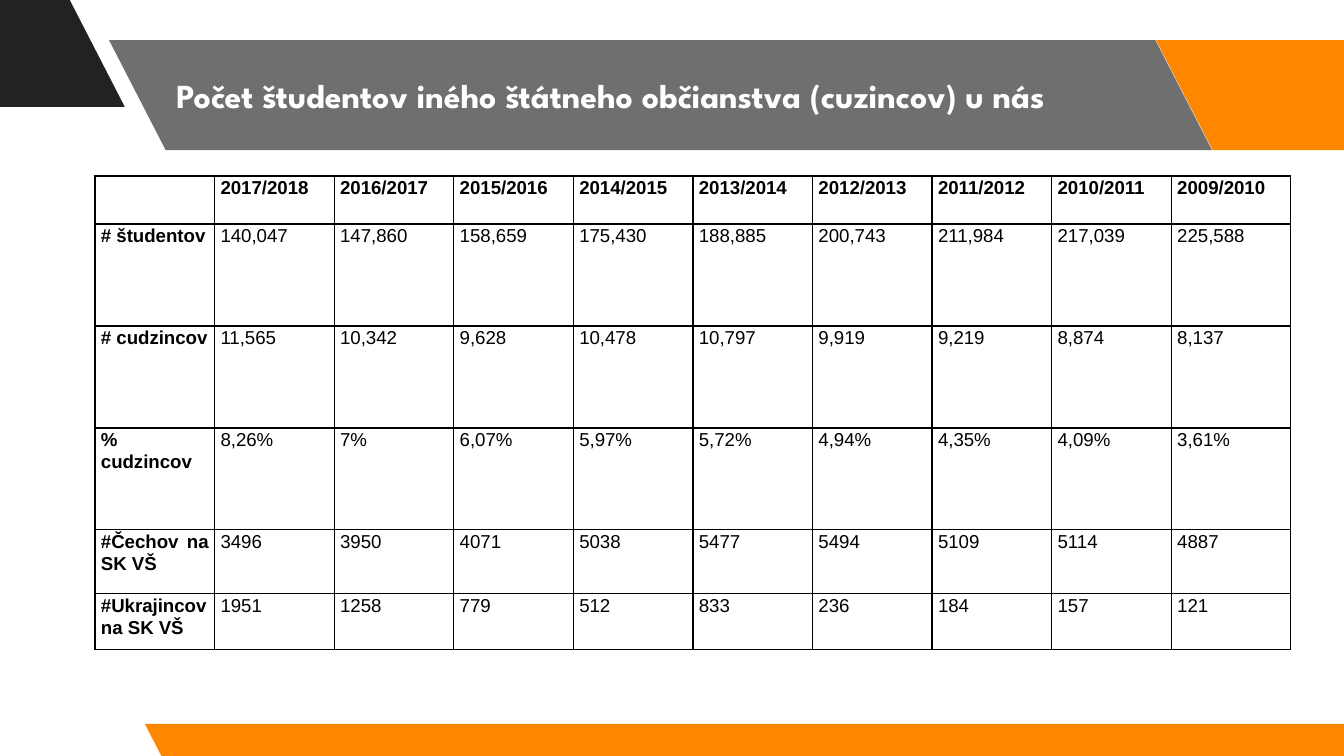
from dataclasses import dataclass

from lxml.etree import SubElement
from pptx import Presentation
from pptx.dml.color import RGBColor
from pptx.enum.shapes import MSO_SHAPE as Shape
from pptx.enum.text import MSO_ANCHOR as Anchor, PP_ALIGN as Align
from pptx.oxml import parse_xml
from pptx.oxml.ns import nsdecls, qn
from pptx.util import Pt

EMU_PER_PX = 914400 / 134.4


def px(n):
    return round(n * EMU_PER_PX)


@dataclass(frozen=True)
class Theme:
    dark: str = "222222"
    accent: str = "FF8700"
    light: str = "FFFFFF"
    ink: str = "000000"
    title_font: str = "League Spartan"
    body_font: str = "Arial"
    title_size: int = 18
    table_size: int = 10
    border: float = 0.75
    slant: float = 0.515


class SlideBuilder:
    """Draws styled elements on the current slide."""

    def __init__(self, prs, theme):
        self.theme = theme
        self.s = prs.slides.add_slide(prs.slide_layouts[5])

    def style(self, p, name, size, color, bold):
        p.font.name = name
        p.font.size = Pt(size)
        p.font.bold = bold
        p.font.color.rgb = RGBColor.from_string(color)

    def band(self, x, y, w, h, color, opacity=100):
        sp = self.s.shapes.add_shape(Shape.PARALLELOGRAM, px(x), px(y), px(w), px(h))
        sp.adjustments[0] = self.theme.slant
        sp.shadow.inherit = False
        sp.fill.solid()
        sp.fill.fore_color.rgb = RGBColor.from_string(color)
        sp.line.fill.background()
        sp._element.spPr.find(qn("a:xfrm")).set("flipH", "1")
        if opacity < 100:
            clr = sp._element.spPr.find(qn("a:solidFill"))[0]
            SubElement(clr, qn("a:alpha")).set("val", str(opacity * 1000))

    def title(self, text, x, y, w, h):
        t = self.theme
        sp = self.s.shapes.title
        sp.left, sp.top, sp.width, sp.height = px(x), px(y), px(w), px(h)
        self.s.shapes._spTree.append(sp._element)
        tf = sp.text_frame
        tf.text = text
        tf.word_wrap = True
        tf.vertical_anchor = Anchor.MIDDLE
        tf.margin_left = tf.margin_right = tf.margin_top = tf.margin_bottom = Pt(7.2)
        p = tf.paragraphs[0]
        p.alignment = Align.LEFT
        self.style(p, t.title_font, t.title_size, t.light, True)

    def borders(self, cell):
        tc_pr = cell._tc.get_or_add_tcPr()
        for side in ("lnL", "lnR", "lnT", "lnB"):
            tc_pr.append(parse_xml(
                f'<a:{side} {nsdecls("a")} w="{Pt(self.theme.border)}"><a:solidFill>'
                f'<a:srgbClr val="{self.theme.ink}"/></a:solidFill></a:{side}>'))

    def cell(self, cell, text, bold):
        t = self.theme
        cell.margin_left = cell.margin_right = px(6)
        cell.margin_top = cell.margin_bottom = 0
        self.borders(cell)
        cell.fill.background()
        cell.text = text
        p = cell.text_frame.paragraphs[0]
        p.alignment = Align.JUSTIFY
        p.line_spacing = 1.07
        p.space_after = Pt(8)
        self.style(p, t.body_font, t.table_size, t.ink, bold)

    def table(self, rows, heights, x, y, w):
        n = len(rows[0])
        tbl = self.s.shapes.add_table(
            len(rows), n, px(x), px(y), px(w), px(sum(heights))).table
        tbl.first_row = tbl.horz_banding = False
        for col in tbl.columns:
            col.width = px(w / n)
        for i, (row, height) in enumerate(zip(rows, heights)):
            tbl.rows[i].height = px(height)
            for j, text in enumerate(row):
                self.cell(tbl.cell(i, j), text, i == 0 or j == 0)


YEARS = [f"{y}/{y + 1}" for y in range(2017, 2008, -1)]
FIGURES = {
    "# študentov": "140,047 147,860 158,659 175,430 188,885 200,743 211,984 217,039 225,588",
    "# cudzincov": "11,565 10,342 9,628 10,478 10,797 9,919 9,219 8,874 8,137",
    "% cudzincov": "8,26% 7% 6,07% 5,97% 5,72% 4,94% 4,35% 4,09% 3,61%",
    "#Čechov na SK VŠ": "3496 3950 4071 5038 5477 5494 5109 5114 4887",
    "#Ukrajincov na SK VŠ": "1951 1258 779 512 833 236 184 157 121",
}


def main():
    prs = Presentation()
    prs.slide_width, prs.slide_height = px(1344), px(756)
    theme = Theme()
    b = SlideBuilder(prs, theme)
    b.band(-133, -3, 258, 110, theme.dark)
    b.band(109, 40, 1103, 110, theme.dark, opacity=65)
    b.band(1156, 40, 258, 110, theme.accent)
    b.band(145, 724, 1230, 34, theme.accent)
    b.title("Počet študentov iného štátneho občianstva (cuzincov) u nás", 163, 40, 988, 110)
    rows = [["", *YEARS]] + [[name, *values.split()] for name, values in FIGURES.items()]
    b.table(rows, [48, 102, 102, 102, 64, 56], 95, 176, 1196)
    prs.save("out.pptx")


if __name__ == "__main__":
    main()
